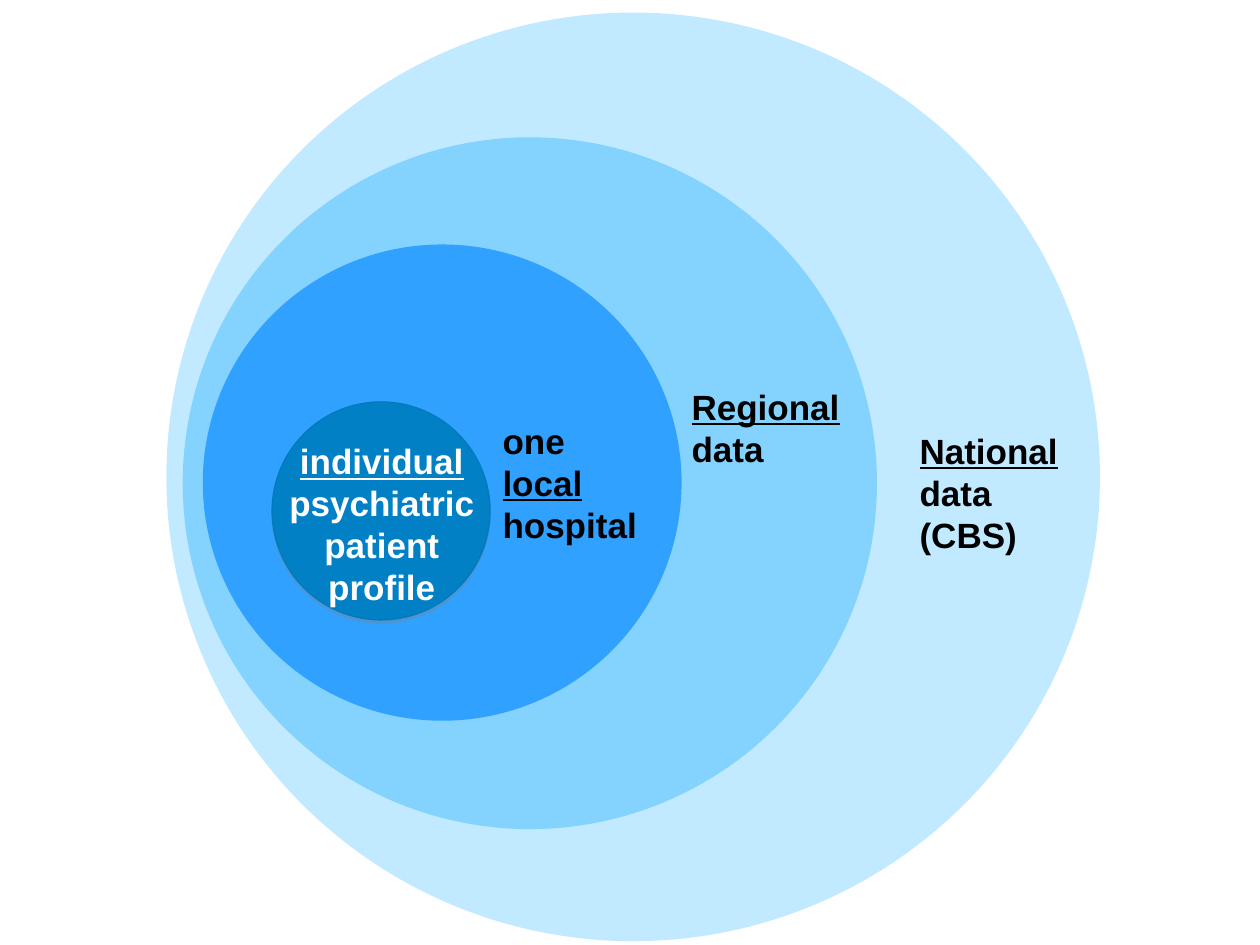
"""Nested circles of data, from one patient profile to the nation."""
from lxml.etree import SubElement
from pptx import Presentation
from pptx.dml.color import RGBColor
from pptx.enum.shapes import MSO_SHAPE
from pptx.enum.text import PP_ALIGN
from pptx.oxml.ns import qn
from pptx.util import Inches, Pt


def color(code):
    return RGBColor.from_string(code)


def write(para, text, font="Arial", size=20, ink="000000", bold=True, under=False):
    run = para.add_run()
    run.text = text
    run.font.name = font
    run.font.size = Pt(size)
    run.font.bold = bold
    run.font.underline = under
    run.font.color.rgb = color(ink)


class Sketch:
    font, size = "Arial", 20

    def __init__(self, slide):
        self.group = slide.shapes.add_group_shape()

    def circle(self, box, fill, edge=None):
        shape = self.group.shapes.add_shape(MSO_SHAPE.OVAL, *map(Inches, box))
        shape.shadow.inherit = False
        shape.fill.solid()
        shape.fill.fore_color.rgb = color(fill)
        if edge:
            shape.line.color.rgb = color(edge)
            shape.line.width = Pt(0.75)
        else:
            shape.line.fill.background()
        return shape

    def shade(self, shape, tint="808080", alpha=35, drop=1.8):
        effects = shape._element.spPr.find(qn("a:effectLst"))
        outer = SubElement(effects, qn("a:outerShdw"), blurRad="0", dist=str(Pt(drop)),
                           dir="5400000", rotWithShape="0")
        tone = SubElement(outer, qn("a:srgbClr"), val=tint)
        SubElement(tone, qn("a:alpha"), val=str(alpha * 1000))

    def label(self, box, parts, ink="000000", center=False):
        frame = self.group.shapes.add_textbox(*map(Inches, box)).text_frame
        frame.word_wrap = True
        para = frame.paragraphs[0]
        if center:
            frame.margin_left = frame.margin_right = 0
            frame.margin_top = frame.margin_bottom = 0
            para.alignment = PP_ALIGN.CENTER
            para.space_after = Pt(10)
        for text, under in parts:
            write(para, text, font=self.font, size=self.size, ink=ink, under=under)


def main():
    deck = Presentation()
    deck.slide_width, deck.slide_height = Inches(10), Inches(7.5)
    sketch = Sketch(deck.slides.add_slide(deck.slide_layouts[6]))

    rings = [
        ((1.32, 0.1, 7.41, 7.37), "C1E9FF", (7.2, 3.36, 1.34, 1.39),
         [("National", True), (" data (CBS)", False)]),
        ((1.45, 1.09, 5.51, 5.49), "83D3FE", (5.39, 3.01, 1.43, 1.14),
         [("Regional", True), (" data", False)]),
        ((1.61, 1.94, 3.8, 3.78), "31A1FF", (3.89, 3.28, 1.36, 1.11),
         [("one ", False), ("local", True), (" hospital", False)]),
    ]
    for ring, fill, box, parts in rings:
        sketch.circle(ring, fill)
        sketch.label(box, parts)

    core = sketch.circle((2.16, 3.19, 1.73, 1.73), "0180C6", edge="017ABC")
    sketch.shade(core)
    sketch.label((2.27, 3.49, 1.52, 1.12),
                 [("individual", True), (" psychiatric patient profile", False)],
                 ink="FFFFFF", center=True)
    deck.save("out.pptx")


if __name__ == "__main__":
    main()
